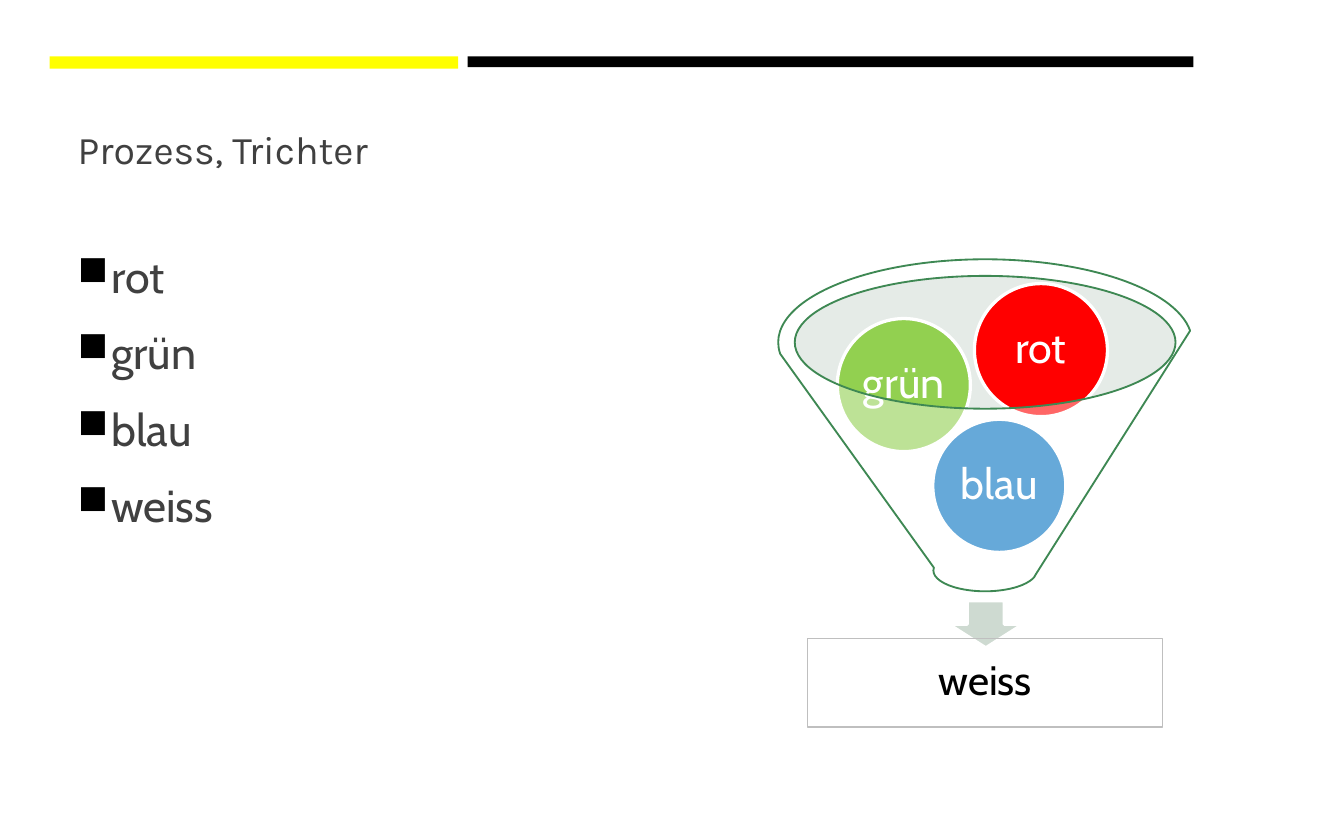
from lxml import etree
from pptx import Presentation
from pptx.dml.color import RGBColor
from pptx.enum.shapes import MSO_SHAPE
from pptx.enum.text import MSO_ANCHOR, PP_ALIGN
from pptx.oxml.ns import qn
from pptx.util import Inches, Pt

RECT = MSO_SHAPE.RECTANGLE
OVAL = MSO_SHAPE.OVAL
ARROW = MSO_SHAPE.DOWN_ARROW
FUNNEL = MSO_SHAPE.FUNNEL
MIDDLE = MSO_ANCHOR.MIDDLE
CENTER = PP_ALIGN.CENTER

COLORS = {
    "yellow": "FFFF00", "black": "000000", "white": "FFFFFF",
    "text": "404040", "rim": "C0CFC3", "arrow": "CEDAD1",
    "frame": "BFBFBF", "outline": "3E8853",
    "red": "FF0000", "green": "92D050", "blue": "0070C0",
}


def color(name):
    return RGBColor.from_string(COLORS[name])


def add_shape(slide, kind, box, fill=None, line=None, width=1, alpha=None):
    """Add a preset shape; alpha is its opacity in percent."""
    shape = slide.shapes.add_shape(kind, *map(Inches, box))
    shape.shadow.inherit = False
    if fill:
        shape.fill.solid()
        shape.fill.fore_color.rgb = color(fill)
    else:
        shape.fill.background()
    if alpha:
        tint = shape.fill._xPr.find(qn("a:solidFill"))[0]
        etree.SubElement(tint, qn("a:alpha"), val=str(alpha * 1000))
    if line:
        shape.line.color.rgb = color(line)
        shape.line.width = Pt(width)
    else:
        shape.line.fill.background()
    return shape


def set_font(para, name, size, tone):
    para.font.name = name
    para.font.size = Pt(size)
    para.font.color.rgb = color(tone)


def add_label(shape, text, size, tone, inset):
    """Write one centred line into a shape."""
    frame = shape.text_frame
    frame.word_wrap = True
    frame.vertical_anchor = MIDDLE
    frame.margin_left = frame.margin_right = Inches(inset)
    frame.margin_top = frame.margin_bottom = Inches(inset)
    para = frame.paragraphs[0]
    para.text = text
    para.alignment = CENTER
    para.line_spacing = 0.9
    set_font(para, "Cabin", size, tone)


def add_box(slide, box):
    frame = slide.shapes.add_textbox(*map(Inches, box)).text_frame
    frame.word_wrap = True
    return frame


def add_title(slide, text):
    frame = add_box(slide, (0.48, 0.66, 9.05, 0.9))
    frame.vertical_anchor = MIDDLE
    para = frame.paragraphs[0]
    para.text = text
    set_font(para, "Karla", 21, "text")


def add_bullet(para):
    props = para._p.get_or_add_pPr()
    props.set("marL", str(Inches(0.25)))
    props.set("indent", str(-Inches(0.25)))
    tint = etree.SubElement(props, qn("a:buClr"))
    etree.SubElement(tint, qn("a:srgbClr"), val=COLORS["black"])
    etree.SubElement(props, qn("a:buSzPct"), val="92000")
    etree.SubElement(props, qn("a:buChar"), char="■")


def add_list(slide, items):
    frame = add_box(slide, (0.48, 1.76, 4.4, 3.83))
    for i, item in enumerate(items):
        para = frame.add_paragraph() if i else frame.paragraphs[0]
        para.text = item
        add_bullet(para)
        para.line_spacing = 1.1
        para.space_before = Pt(4.8 if i else 0)
        para.space_after = Pt(4.5)
        set_font(para, "Cabin", 24, "text")


def add_funnel(slide):
    add_shape(slide, OVAL, (5.91, 2.05, 2.84, 0.99), "rim", alpha=40)
    add_shape(slide, ARROW, (7.06, 4.47, 0.55, 0.35), "arrow", "white", 1.75)
    result = add_shape(slide, RECT, (6.01, 4.75, 2.64, 0.66),
                       line="frame", width=0.75)
    add_label(result, "weiss", 22, "black", 0.17)
    balls = [("blau", "blue", 6.94, 3.12), ("grün", "green", 6.23, 2.37),
             ("rot", "red", 7.25, 2.11)]
    for text, fill, left, top in balls:
        ball = add_shape(slide, OVAL, (left, top, 0.99, 0.99),
                         fill, "white", 1.75)
        add_label(ball, text, 23, "white", 0.03)
    add_shape(slide, FUNNEL, (5.79, 1.93, 3.08, 2.47),
              "white", "outline", alpha=40)


def main():
    deck = Presentation()
    deck.slide_width = Inches(10)
    deck.slide_height = Inches(6.25)
    slide = deck.slides.add_slide(deck.slide_layouts[6])
    add_shape(slide, RECT, (0.37, 0.42, 3.04, 0.09), "yellow")
    add_shape(slide, RECT, (3.48, 0.42, 5.4, 0.08), "black")
    add_title(slide, "Prozess, Trichter")
    add_list(slide, ["rot", "grün", "blau", "weiss"])
    add_funnel(slide)
    deck.save("out.pptx")


if __name__ == "__main__":
    main()
